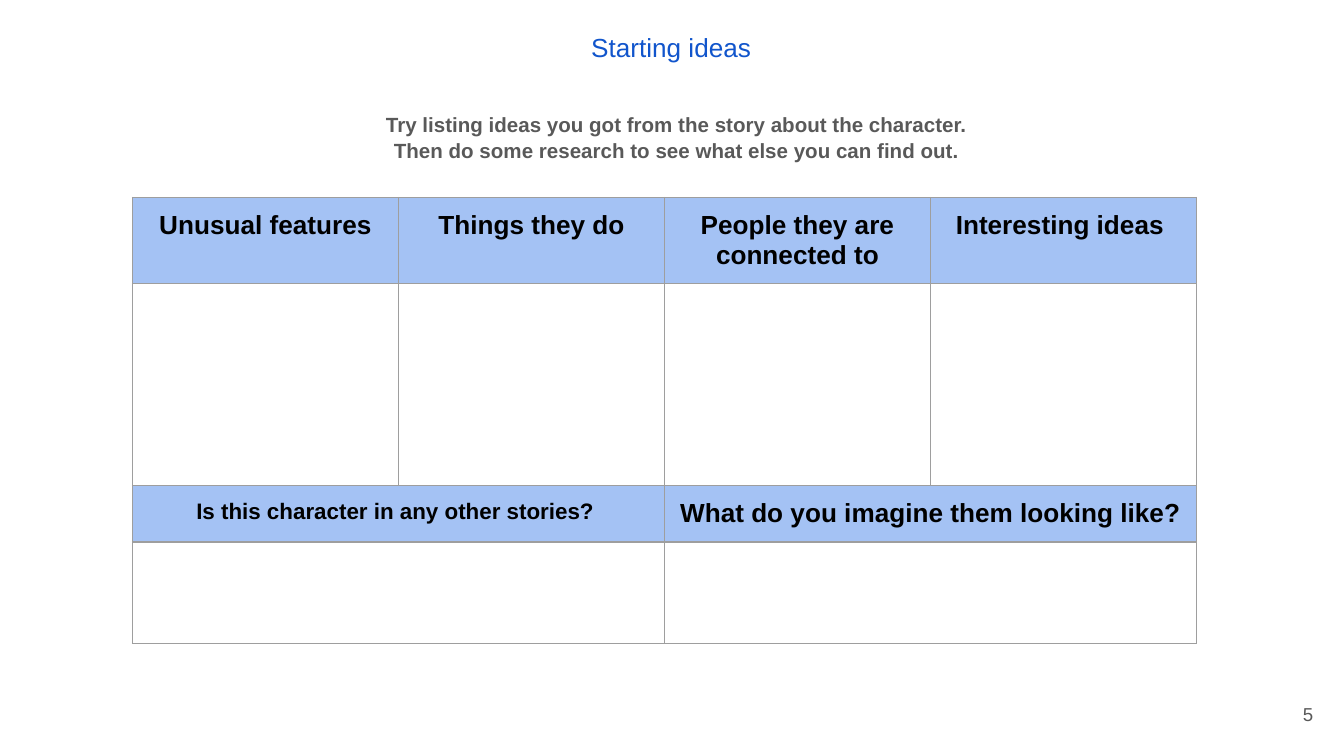
from dataclasses import dataclass

from lxml import etree
from pptx import Presentation
from pptx.dml.color import RGBColor
from pptx.enum import text
from pptx.oxml import ns
from pptx.util import Pt

COLORS = {"title": "1155CC", "body": "595959", "header": "A4C2F4",
          "ink": "000000", "border": "9E9E9E"}
INSET = 7.2
COL_W = 142.5
ROW_HEIGHTS = (46, 108.5, 30, 54.5)


@dataclass
class Label:
    lines: tuple[str, ...]
    left: float
    top: float
    width: float
    height: float
    size: float
    color: str
    bold: bool = False
    inset_y: float = INSET
    align: text.PP_ALIGN = text.PP_ALIGN.CENTER
    anchor: text.MSO_ANCHOR = text.MSO_ANCHOR.TOP
    gap: float = 0


@dataclass
class Heading:
    words: str
    row: int
    col: int
    span: int = 1
    size: float = 14


LABELS = (
    Label(("Starting ideas",), 152.6, 13, 414, 39.6, 14, "title", inset_y=3.6),
    Label(("Try listing ideas you got from the story about the character.",
           "Then do some research to see what else you can find out."),
          173.5, 52.6, 378, 43.2, 11, "body", bold=True, gap=0.75),
    Label(("5",), 667.4, 367.2, 43.2, 31, 10, "body",
          align=text.PP_ALIGN.RIGHT, anchor=text.MSO_ANCHOR.MIDDLE),
)
HEADINGS = (
    Heading("Unusual features", 0, 0),
    Heading("Things they do", 0, 1),
    Heading("People they are connected to", 0, 2),
    Heading("Interesting ideas ", 0, 3),
    Heading("Is this character in any other stories? ", 2, 0, 2, 12),
    Heading("What do you imagine them looking like?", 2, 2, 2),
)


def set_attrs(obj, values: dict) -> None:
    for name, value in values.items():
        setattr(obj, name, value)


def add_run(p, words: str, size: float, color: str, bold: bool) -> None:
    r = p.add_run()
    r.text = words
    set_attrs(r.font, {"name": "Arial", "size": Pt(size), "bold": bold})
    r.font.color.rgb = RGBColor.from_string(COLORS[color])


def draw_label(s, label: Label) -> None:
    box = map(Pt, (label.left, label.top, label.width, label.height))
    tf = s.shapes.add_textbox(*box).text_frame
    set_attrs(tf, {"word_wrap": True, "vertical_anchor": label.anchor,
                   "margin_left": Pt(INSET), "margin_right": Pt(INSET),
                   "margin_top": Pt(label.inset_y), "margin_bottom": Pt(label.inset_y)})
    for i, line in enumerate(label.lines):
        p = tf.add_paragraph() if i else tf.paragraphs[0]
        set_attrs(p, {"alignment": label.align, "space_after": Pt(label.gap)})
        add_run(p, line, label.size, label.color, label.bold)


def add_borders(cell) -> None:
    """Line all four sides; call before filling, as borders come first in tcPr."""
    tc_pr = cell._tc.get_or_add_tcPr()
    for side in ("lnL", "lnR", "lnT", "lnB"):
        ln = etree.SubElement(tc_pr, ns.qn(f"a:{side}"), w=str(Pt(0.75)))
        fill = etree.SubElement(ln, ns.qn("a:solidFill"))
        etree.SubElement(fill, ns.qn("a:srgbClr"), val=COLORS["border"])


def draw_table(s) -> None:
    cols = 4
    frame = s.shapes.add_table(len(ROW_HEIGHTS), cols, Pt(71), Pt(105.8),
                               Pt(COL_W * cols), Pt(sum(ROW_HEIGHTS)))
    table = frame.table
    set_attrs(table, {"first_row": False, "horz_banding": False})
    for col in table.columns:
        col.width = Pt(COL_W)
    for row, height in zip(table.rows, ROW_HEIGHTS):
        row.height = Pt(height)
    for cell in table.iter_cells():
        set_attrs(cell, {f"margin_{side}": Pt(INSET)
                         for side in ("left", "right", "top", "bottom")})
        add_borders(cell)
        cell.fill.background()
    for row in (2, 3):
        for col in (0, 2):
            table.cell(row, col).merge(table.cell(row, col + 1))
    for h in HEADINGS:
        for col in range(h.col, h.col + h.span):
            fill = table.cell(h.row, col).fill
            fill.solid()
            fill.fore_color.rgb = RGBColor.from_string(COLORS["header"])
        p = table.cell(h.row, h.col).text_frame.paragraphs[0]
        p.alignment = text.PP_ALIGN.CENTER
        add_run(p, h.words, h.size, "ink", True)


def main() -> None:
    prs = Presentation()
    set_attrs(prs, {"slide_width": Pt(720), "slide_height": Pt(405)})
    s = prs.slides.add_slide(prs.slide_layouts[6])
    draw_table(s)
    for label in LABELS:
        draw_label(s, label)
    prs.save("out.pptx")


if __name__ == "__main__":
    main()
